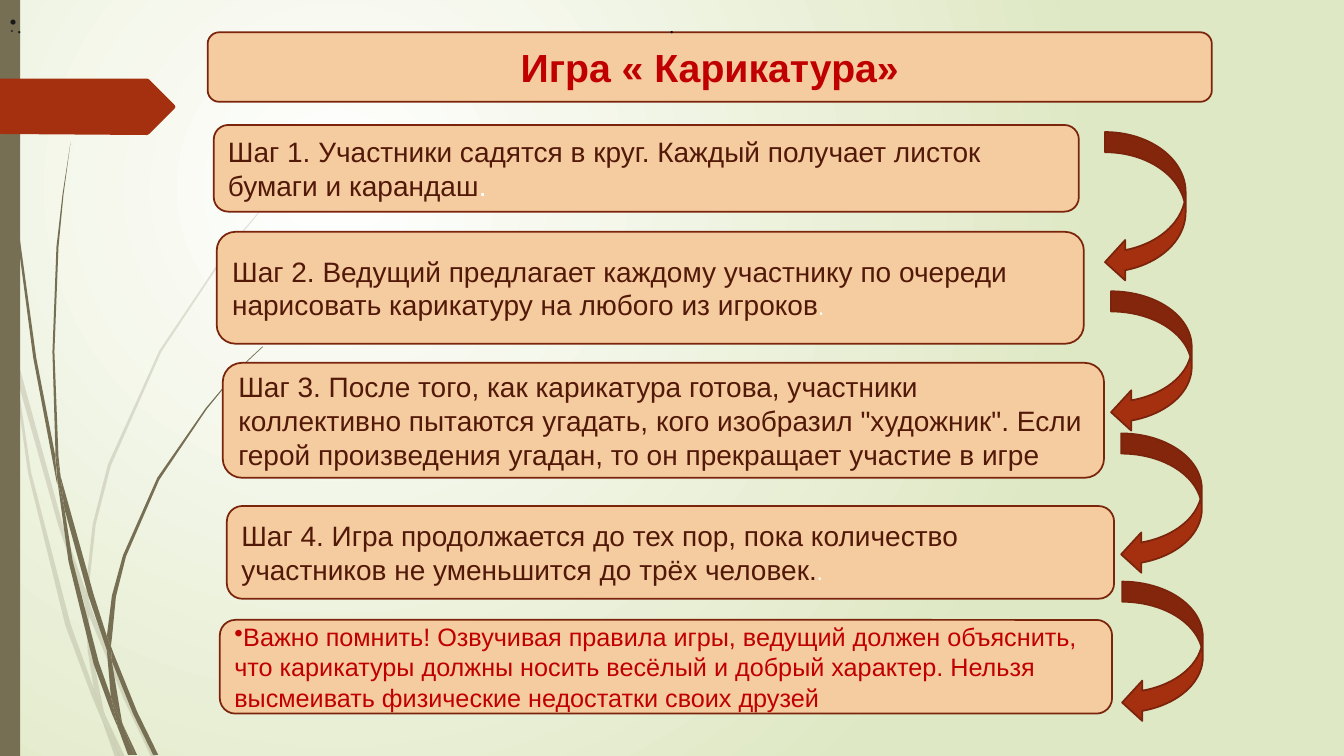
"""Build the slide that explains the rules of the caricature game in four steps."""
from dataclasses import dataclass

from lxml import etree
from pptx import Presentation
from pptx.dml.color import RGBColor
from pptx.enum.shapes import MSO_SHAPE
from pptx.enum.text import MSO_ANCHOR, MSO_AUTO_SIZE, PP_ALIGN
from pptx.oxml.ns import qn
from pptx.util import Inches, Pt

RECTANGLE = MSO_SHAPE.RECTANGLE
ROUNDED_PANEL = MSO_SHAPE.FLOWCHART_ALTERNATE_PROCESS
CURVED_ARROW = MSO_SHAPE.CURVED_LEFT_ARROW
MIDDLE = MSO_ANCHOR.MIDDLE
GROW = MSO_AUTO_SIZE.SHAPE_TO_FIT_TEXT
LEFT, CENTER, JUSTIFY = PP_ALIGN.LEFT, PP_ALIGN.CENTER, PP_ALIGN.JUSTIFY

WHITE = RGBColor(0xFF, 0xFF, 0xFF)
BLACK = RGBColor(0x00, 0x00, 0x00)
NEAR_BLACK = RGBColor(0x18, 0x18, 0x18)
DARK_GRAY = RGBColor(0x34, 0x34, 0x34)
PALE_GREEN = RGBColor(0xDF, 0xE8, 0xC4)
OLIVE = RGBColor(0x76, 0x6F, 0x54)
RUST = RGBColor(0xA5, 0x30, 0x10)
DARK_RUST = RGBColor(0x7A, 0x24, 0x0C)
PEACH = RGBColor(0xF5, 0xCB, 0xA0)
BROWN = RGBColor(0x52, 0x18, 0x08)
RED = RGBColor(0xC0, 0x00, 0x00)

Points = tuple[tuple[float, float], ...]


@dataclass(frozen=True)
class TextRun:
    text: str
    size: float
    color: RGBColor
    font: str = "Arial"
    bold: bool = False


@dataclass(frozen=True)
class TextBlock:
    left: float
    top: float
    width: float
    height: float
    runs: tuple[TextRun, ...]
    alignment: PP_ALIGN = LEFT
    bulleted: bool = False


@dataclass(frozen=True)
class Arrow:
    left: float
    top: float
    height: float = 1.4


FAINT_BLADES: tuple[Points, ...] = (
    ((0.11, 3.5), (0.09, 3.22), (0, 2.82), (0, 2.99), (0.1, 3.44)),
    ((0.58, 5.22), (0.84, 5.99), (0.85, 5.86), (0.62, 5.2), (0.14, 3.45), (0.17, 3.76)),
    ((0.92, 6.07), (0.88, 5.96), (0.88, 6.1), (1.23, 6.94), (1.5, 7.51), (1.55, 7.51), (1.27, 6.92)),
    ((1.19, 7.51), (1.24, 7.51), (1.05, 7.11)),
    ((0.93, 6.83), (0.7, 6.19), (0.31, 4.69), (0.17, 3.76), (0.11, 3.5), (0.28, 4.7),
     (0.65, 6.21), (0.92, 6.93), (1.01, 7.14), (0.99, 7.07)),
    ((0.84, 5.99), (0.87, 6.46), (0.93, 6.83), (0.96, 6.92), (1.05, 7.11), (1.03, 7.06),
     (0.91, 6.46), (0.88, 6.1), (0.88, 6.08)),
    ((0.88, 5.84), (0.95, 5.2), (1.1, 4.62), (1.6, 3.49), (2.29, 2.45), (2.68, 1.98), (2.9, 1.75),
     (3.12, 1.54), (3.12, 1.53), (2.89, 1.75), (2.68, 1.97), (2.28, 2.44), (1.58, 3.48),
     (1.07, 4.61), (0.92, 5.2), (0.85, 5.84), (0.85, 5.86), (0.88, 5.96)),
    ((1.01, 7.14), (1.14, 7.51), (1.19, 7.51)),
    ((0.88, 6.08), (0.88, 6.1), (0.88, 5.96), (0.85, 5.86), (0.84, 5.99)),
    ((0.96, 6.92), (0.93, 6.83), (0.99, 7.07), (1.01, 7.14), (1.19, 7.51), (1.05, 7.11)),
)

BOLD_BLADES: tuple[Points, ...] = (
    ((0.07, 1.1), (0.17, 2.33), (0.33, 3.55), (0.56, 4.77), (0.57, 4.81), (0.55, 4.57), (0.55, 4.53),
     (0.36, 3.55), (0.19, 2.32), (0.08, 1.09), (0.05, 0.48), (0.04, 0), (0.03, 0), (0.04, 0.48)),
    ((0.88, 5.92), (1.06, 6.45), (1.06, 6.31), (0.93, 5.9), (0.6, 4.72), (0.64, 5.05)),
    ((1.13, 6.49), (1.1, 6.41), (1.11, 6.56), (1.32, 7.08), (1.52, 7.49), (1.57, 7.49), (1.36, 7.06)),
    ((1.1, 6.91), (0.98, 6.57), (0.72, 5.56), (0.64, 5.05), (0.57, 4.77), (0.68, 5.57),
     (0.93, 6.59), (1.11, 7.08), (1.17, 7.22), (1.16, 7.17)),
    ((0.6, 4.72), (0.58, 4.53), (0.54, 3.49), (0.58, 2.45), (0.63, 1.93), (0.7, 1.41),
     (0.62, 1.93), (0.56, 2.45), (0.52, 3.49), (0.55, 4.49)),
    ((1.33, 7.49), (1.36, 7.49), (1.22, 7.19)),
    ((0.57, 4.77), (0.64, 5.05), (0.6, 4.72), (0.55, 4.49), (0.55, 4.53)),
    ((1.11, 6.33), (1.15, 5.92), (1.25, 5.52), (1.58, 4.76), (2.05, 4.06), (2.31, 3.74), (2.45, 3.59),
     (2.61, 3.44), (2.6, 3.44), (2.45, 3.58), (2.31, 3.73), (2.04, 4.05), (1.56, 4.74),
     (1.22, 5.51), (1.11, 5.91), (1.06, 6.31), (1.1, 6.41)),
    ((1.17, 7.22), (1.27, 7.49), (1.31, 7.49)),
    ((1.06, 6.45), (1.1, 6.91), (1.16, 7.06), (1.22, 7.19), (1.21, 7.16), (1.11, 6.56), (1.09, 6.51)),
    ((1.06, 6.45), (1.09, 6.51), (1.11, 6.56), (1.1, 6.41), (1.06, 6.31)),
    ((1.16, 7.06), (1.1, 6.91), (1.16, 7.17), (1.17, 7.22), (1.3, 7.49), (1.33, 7.49), (1.22, 7.19)),
)

PAGE_MARKER: Points = ((0, 0.78), (1.46, 0.78), (1.48, 0.79), (1.73, 1.04), (1.74, 1.06),
                       (1.73, 1.08), (1.48, 1.33), (1.46, 1.34), (0, 1.33))

PANELS = (
    TextBlock(2.06, 0.32, 9.96, 0.69, (TextRun("Игра « Карикатура»", 28, RED, bold=True),), CENTER),
    TextBlock(2.12, 1.24, 8.58, 0.86, (
        TextRun("Шаг 1. Участники садятся в круг. Каждый получает листок бумаги и карандаш", 20, BROWN),
        TextRun(".", 20, WHITE))),
    TextBlock(2.15, 2.3, 8.6, 1.11, (
        TextRun("Шаг 2. Ведущий предлагает каждому участнику по очереди "
                "нарисовать карикатуру на любого из игроков", 20, BROWN),
        TextRun(".", 20, WHITE, "Quicksand"))),
    TextBlock(2.21, 3.6, 8.74, 1.14, (
        TextRun("Шаг 3. После того, как карикатура готова, участники коллективно пытаются угадать, "
                "кого изобразил \"художник\". Если герой произведения угадан, "
                "то он прекращает участие в игре", 20, BROWN),)),
    TextBlock(2.25, 5.02, 8.8, 0.92, (
        TextRun("Шаг 4. Игра продолжается до тех пор, пока количество "
                "участников не уменьшится до трёх человек.", 20, BROWN),
        TextRun(".", 20, WHITE, "Quicksand"))),
    TextBlock(2.18, 6.15, 8.85, 0.93, (
        TextRun("Важно помнить! Озвучивая правила игры, ведущий должен объяснить, "
                "что карикатуры должны носить весёлый и добрый характер. "
                "Нельзя высмеивать физические недостатки своих друзей", 18, RED),), bulleted=True),
)

DOTS = (
    TextBlock(6.54, 0.08, 0.25, 0.34, (TextRun(".", 14, BLACK, "Times New Roman"),), JUSTIFY),
    TextBlock(0, 0.08, 0.37, 0.34, (TextRun(".", 14, NEAR_BLACK, "Times New Roman"),), bulleted=True),
    TextBlock(0, 0.09, 0.3, 0.32, (TextRun(".", 13, DARK_GRAY, "Lato"),)),
)

ARROWS = (Arrow(10.96, 1.31, 1.49), Arrow(11.02, 2.89), Arrow(11.12, 4.3), Arrow(11.13, 5.77))


def paint_background(slide) -> None:
    fill = slide.background.fill
    fill.gradient()
    for stop, position, color in zip(fill.gradient_stops, (0, 1), (WHITE, PALE_GREEN)):
        stop.position = position
        stop.color.rgb = color
    gradient = slide.background._cSld.find(".//" + qn("a:gradFill"))
    linear = gradient.find(qn("a:lin"))
    radial = etree.Element(qn("a:path"), path="circle")
    etree.SubElement(radial, qn("a:fillToRect"), l="50000", t="50000", r="100000", b="100000")
    gradient.replace(linear, radial)


def style_shape(shape, fill: RGBColor, line: RGBColor | None = None) -> None:
    shape.shadow.inherit = False
    shape.fill.solid()
    shape.fill.fore_color.rgb = fill
    if line is None:
        shape.line.fill.background()
    else:
        shape.line.color.rgb = line
        shape.line.width = Pt(1.25)


def add_outline(slide, points: Points, color: RGBColor, opacity: int = 100) -> None:
    corners = [(Inches(x), Inches(y)) for x, y in points]
    builder = slide.shapes.build_freeform(*corners[0])
    builder.add_line_segments(corners[1:], close=True)
    shape = builder.convert_to_shape()
    style_shape(shape, color)
    if opacity < 100:
        color_element = shape._element.spPr.find(qn("a:solidFill"))[0]
        etree.SubElement(color_element, qn("a:alpha"), val=str(opacity * 1000))


def write_text(shape, block: TextBlock, wrap: bool) -> None:
    frame = shape.text_frame
    frame.word_wrap = wrap
    frame.vertical_anchor = MIDDLE
    paragraph = frame.paragraphs[0]
    paragraph.alignment = block.alignment
    if block.bulleted:
        etree.SubElement(paragraph._p.get_or_add_pPr(), qn("a:buChar"), char="•")
    for text_run in block.runs:
        run = paragraph.add_run()
        run.text = text_run.text
        run.font.name = text_run.font
        run.font.size = Pt(text_run.size)
        run.font.bold = text_run.bold
        run.font.color.rgb = text_run.color


def add_preset(slide, preset: MSO_SHAPE, left: float, top: float, width: float, height: float):
    return slide.shapes.add_shape(preset, Inches(left), Inches(top), Inches(width), Inches(height))


def main() -> None:
    presentation = Presentation()
    presentation.slide_width, presentation.slide_height = Inches(13.33), Inches(7.5)
    slide = presentation.slides.add_slide(presentation.slide_layouts[6])
    paint_background(slide)
    for blade in FAINT_BLADES:
        add_outline(slide, blade, OLIVE, 20)
    for blade in BOLD_BLADES:
        add_outline(slide, blade, OLIVE)
    style_shape(add_preset(slide, RECTANGLE, 0, 0, 0.2, 7.5), OLIVE)
    add_outline(slide, PAGE_MARKER, RUST)
    for panel in PANELS:
        shape = add_preset(slide, ROUNDED_PANEL, panel.left, panel.top, panel.width, panel.height)
        style_shape(shape, PEACH, DARK_RUST)
        write_text(shape, panel, wrap=True)
    for dot in DOTS:
        box = slide.shapes.add_textbox(Inches(dot.left), Inches(dot.top), Inches(dot.width), Inches(dot.height))
        write_text(box, dot, wrap=False)
        box.text_frame.auto_size = GROW
    for arrow in ARROWS:
        style_shape(add_preset(slide, CURVED_ARROW, arrow.left, arrow.top, 0.8, arrow.height), RUST, DARK_RUST)
    presentation.save("out.pptx")


if __name__ == "__main__":
    main()
